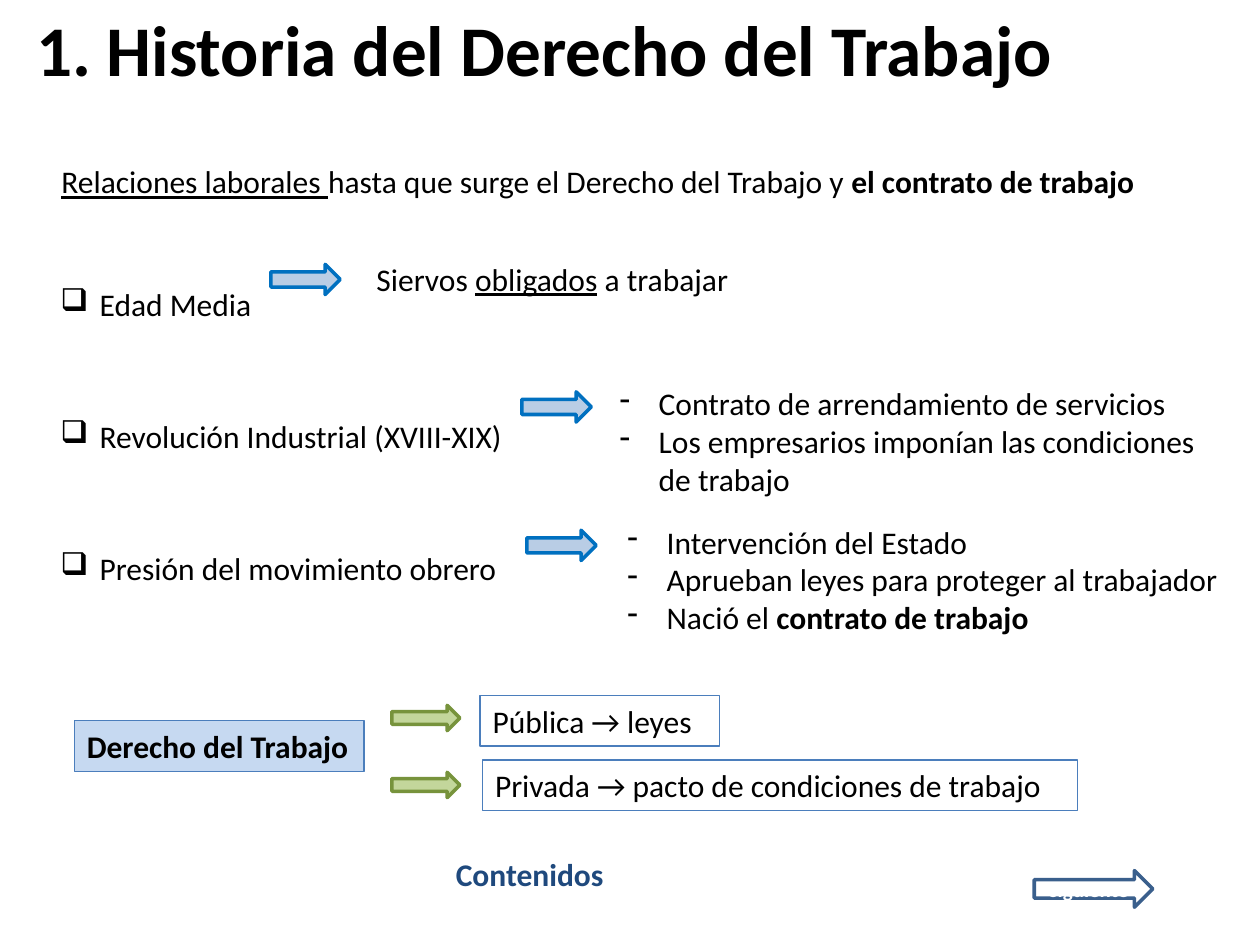
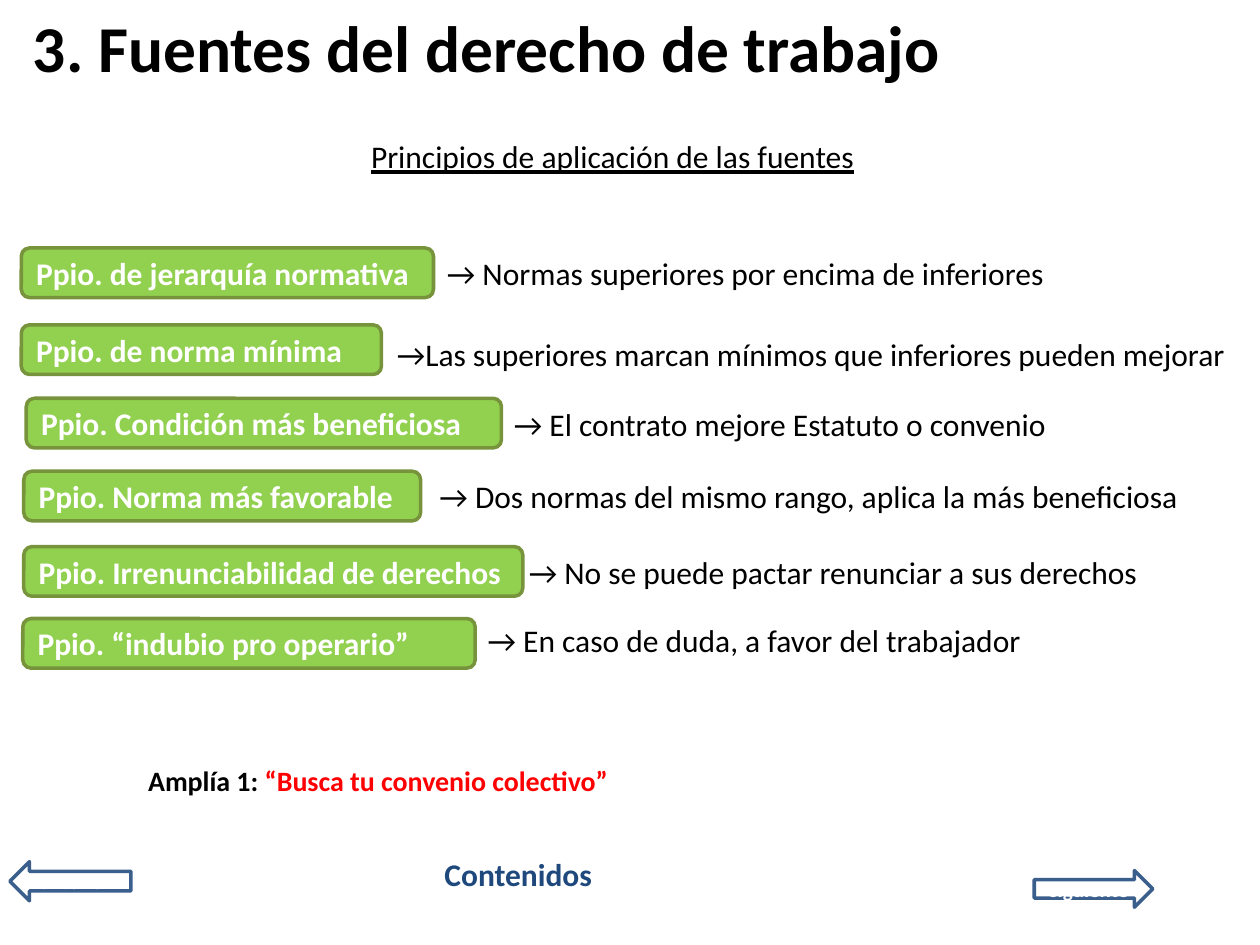
from dataclasses import dataclass

from lxml.etree import SubElement
from pptx import Presentation
from pptx.dml.color import RGBColor
from pptx.enum.shapes import MSO_SHAPE as Shape
from pptx.enum.text import MSO_ANCHOR as Anchor, MSO_AUTO_SIZE as AutoSize, PP_ALIGN as Align
from pptx.oxml.ns import qn
from pptx.util import Cm, Pt


@dataclass(frozen=True)
class Theme:
    font: str = "Calibri"
    black: str = "000000"
    white: str = "FFFFFF"
    red: str = "FF0000"
    navy: str = "1F497D"
    nav_line: str = "3A5F8C"
    box_line: str = "4B7EBC"
    box_fill: str = "C6D9F1"
    blue_fill: str = "B9CDE5"
    blue_line: str = "0070C0"
    green_fill: str = "C3D69B"
    green_line: str = "77933C"
    pill_fill: str = "92D050"
    body: float = 18
    note: float = 16
    nav: float = 12


THEME = Theme()
LINE_HEIGHT = 1.02
HANGING = 0.79

HISTORY_TITLE = "Historia del Derecho del Trabajo"
INTRO = [("Relaciones laborales ", "u"), ("hasta que surge el Derecho del Trabajo y ", ""),
         ("el contrato de trabajo", "b")]
PERIODS = ["Edad Media", "Revolución Industrial (XVIII-XIX)", "Presión del movimiento obrero"]
OUTCOMES = [
    ((5.46, 5.33), (7.34, 5.11, 7.8, 1.02), None,
     [[("Siervos ", ""), ("obligados", "u"), (" a trabajar", "")]]),
    ((10.52, 7.9), (12.24, 7.62, 12.8, 2.57), "-",
     ["Contrato de arrendamiento de servicios",
      "Los empresarios imponían las condiciones de trabajo"]),
    ((10.62, 10.69), (12.4, 10.41, 12.85, 3.33), "-",
     ["Intervención del Estado", "Aprueban leyes para proteger al trabajador",
      [("Nació el ", ""), ("contrato de trabajo", "b")]]),
]
LABOUR_LAW = "Derecho del Trabajo"
REGULATIONS = [
    ("Pública → leyes", (9.68, 14.02, 4.83), 14.22),
    ("Privada → pacto de condiciones de trabajo", (9.73, 15.32, 11.99), 15.57),
]

SOURCES_TITLE = "3. Fuentes del derecho de trabajo"
SUBTITLE = "Principios de aplicación de las fuentes"
PRINCIPLES = [
    ("Ppio. de jerarquía normativa", (0.43, 5.0, 8.31),
     "→ Normas superiores por encima de inferiores", (8.76, 5.0, 15.95)),
    ("Ppio. de norma mínima", (0.43, 6.55, 7.26),
     "→Las superiores marcan mínimos que inferiores pueden mejorar", (7.75, 6.63, 17.37)),
    ("Ppio. Condición más beneficiosa", (0.53, 8.03, 9.58),
     "→ El contrato mejore Estatuto o convenio", (10.11, 8.05, 11.96)),
    ("Ppio. Norma más favorable", (0.48, 9.5, 8.0),
     "→ Dos normas del mismo rango, aplica la más beneficiosa", (8.61, 9.5, 15.75)),
    ("Ppio. Irrenunciabilidad de derechos", (0.48, 11.02, 10.06),
     "→ No se puede pactar renunciar a sus derechos", (10.41, 11.02, 13.92)),
    ("Ppio. “indubio pro operario”", (0.46, 12.47, 9.12),
     "→ En caso de duda, a favor del trabajador", (9.58, 12.4, 11.53)),
]
ACTIVITY = [("Amplía 1: ", "b"), ("“Busca tu convenio colectivo”", "br")]

CONTENTS = "Contenidos"
NEXT = ("siguiente", Shape.RIGHT_ARROW, (20.85, 17.55, 2.39, 0.74))
PREVIOUS = ("anterior", Shape.LEFT_ARROW, (0.2, 17.37, 2.44, 0.79))


def lengths(box):
    return [Cm(value) for value in box]


def add_bullet(paragraph, bullet, indent):
    properties = paragraph._p.get_or_add_pPr()
    properties.set("marL", str(Cm(indent)))
    properties.set("indent", str(-Cm(indent)))
    if bullet == "1.":
        SubElement(properties, qn("a:buAutoNum"), type="arabicPeriod")
    else:
        SubElement(properties, qn("a:buChar"), char=bullet)


def write(shape, paragraphs, size=THEME.body, color=THEME.black, bold=False, align=Align.LEFT,
          anchor=Anchor.TOP, bullet=None, indent=HANGING, spacing=None, wrap=True):
    frame = shape.text_frame
    frame.auto_size = AutoSize.NONE
    frame.word_wrap = wrap
    frame.vertical_anchor = anchor
    for index, content in enumerate(paragraphs):
        paragraph = frame.add_paragraph() if index else frame.paragraphs[0]
        if bullet:
            add_bullet(paragraph, bullet, indent)
        paragraph.alignment = align
        if spacing:
            paragraph.line_spacing = spacing
        for text, marks in [(content, "")] if isinstance(content, str) else content:
            run = paragraph.add_run()
            run.text = text
            run.font.name = THEME.font
            run.font.size = Pt(size)
            run.font.bold = bold or "b" in marks
            run.font.underline = "u" in marks
            run.font.color.rgb = RGBColor.from_string(THEME.red if "r" in marks else color)


def add_text(slide, box, paragraphs, **style):
    write(slide.shapes.add_textbox(*lengths(box)), paragraphs, **style)


def add_figure(slide, kind, box, line, fill=None, width=2):
    shape = slide.shapes.add_shape(kind, *lengths(box))
    shape.shadow.inherit = False
    shape.line.color.rgb = RGBColor.from_string(line)
    shape.line.width = Pt(width)
    if fill:
        shape.fill.solid()
        shape.fill.fore_color.rgb = RGBColor.from_string(fill)
    else:
        shape.fill.background()
    return shape


def add_framed_text(slide, box, text, fill=None, bold=False):
    shape = add_figure(slide, Shape.RECTANGLE, (*box, LINE_HEIGHT), THEME.box_line, fill, 0.75)
    write(shape, [text], bold=bold)


def add_slide(presentation, title, box, size, contents_left, navigation, bullet=None):
    slide = presentation.slides.add_slide(presentation.slide_layouts[5])
    heading = slide.shapes.title
    heading.left, heading.top, heading.width, heading.height = lengths(box)
    write(heading, [title], size=size, bold=True, anchor=Anchor.MIDDLE, bullet=bullet, indent=1.42)
    add_text(slide, (contents_left, 17.12, 3.66, LINE_HEIGHT), [CONTENTS],
             color=THEME.navy, bold=True)
    for label, kind, place in navigation:
        arrow = add_figure(slide, kind, place, THEME.nav_line)
        write(arrow, [label], size=THEME.nav, color=THEME.white, bold=True,
              align=Align.CENTER, anchor=Anchor.MIDDLE)
    return slide


def build_history(presentation):
    slide = add_slide(presentation, HISTORY_TITLE, (0.48, 0, 22.86, 1.93), 40.7, 8.94,
                      [NEXT], bullet="1.")
    add_text(slide, (0.97, 3.71, 10.01, 8.33), PERIODS, bullet="❑", spacing=3.5)
    add_text(slide, (0.99, 3.15, 23.6, LINE_HEIGHT), [INTRO])
    for corner, box, bullet, paragraphs in OUTCOMES:
        add_figure(slide, Shape.RIGHT_ARROW, (*corner, 1.4, 0.61), THEME.blue_line, THEME.blue_fill)
        add_text(slide, box, paragraphs, bullet=bullet)
    add_framed_text(slide, (1.5, 14.53, 5.84), LABOUR_LAW, THEME.box_fill, bold=True)
    for text, box, arrow_top in REGULATIONS:
        add_framed_text(slide, box, text)
        add_figure(slide, Shape.RIGHT_ARROW, (7.9, arrow_top, 1.37, 0.51),
                   THEME.green_line, THEME.green_fill)


def build_sources(presentation):
    slide = add_slide(presentation, SOURCES_TITLE, (0.41, 0.13, 22.86, 1.6), 37.4, 8.71,
                      [PREVIOUS, NEXT])
    add_text(slide, (3.89, 2.64, 16.92, LINE_HEIGHT), [[(SUBTITLE, "u")]], align=Align.CENTER)
    for name, pill_box, meaning, meaning_box in PRINCIPLES:
        pill = add_figure(slide, Shape.ROUNDED_RECTANGLE, (*pill_box, 1.0),
                          THEME.green_line, THEME.pill_fill)
        write(pill, [name], color=THEME.white, bold=True, anchor=Anchor.MIDDLE)
        add_text(slide, (*meaning_box, LINE_HEIGHT), [meaning])
    add_text(slide, (2.67, 15.27, 9.91, 1.63), [ACTIVITY], size=THEME.note,
             align=Align.CENTER, wrap=False)


def main():
    presentation = Presentation()
    presentation.slide_width, presentation.slide_height = Cm(25.4), Cm(19.05)
    build_history(presentation)
    build_sources(presentation)
    presentation.save("out.pptx")


if __name__ == "__main__":
    main()
